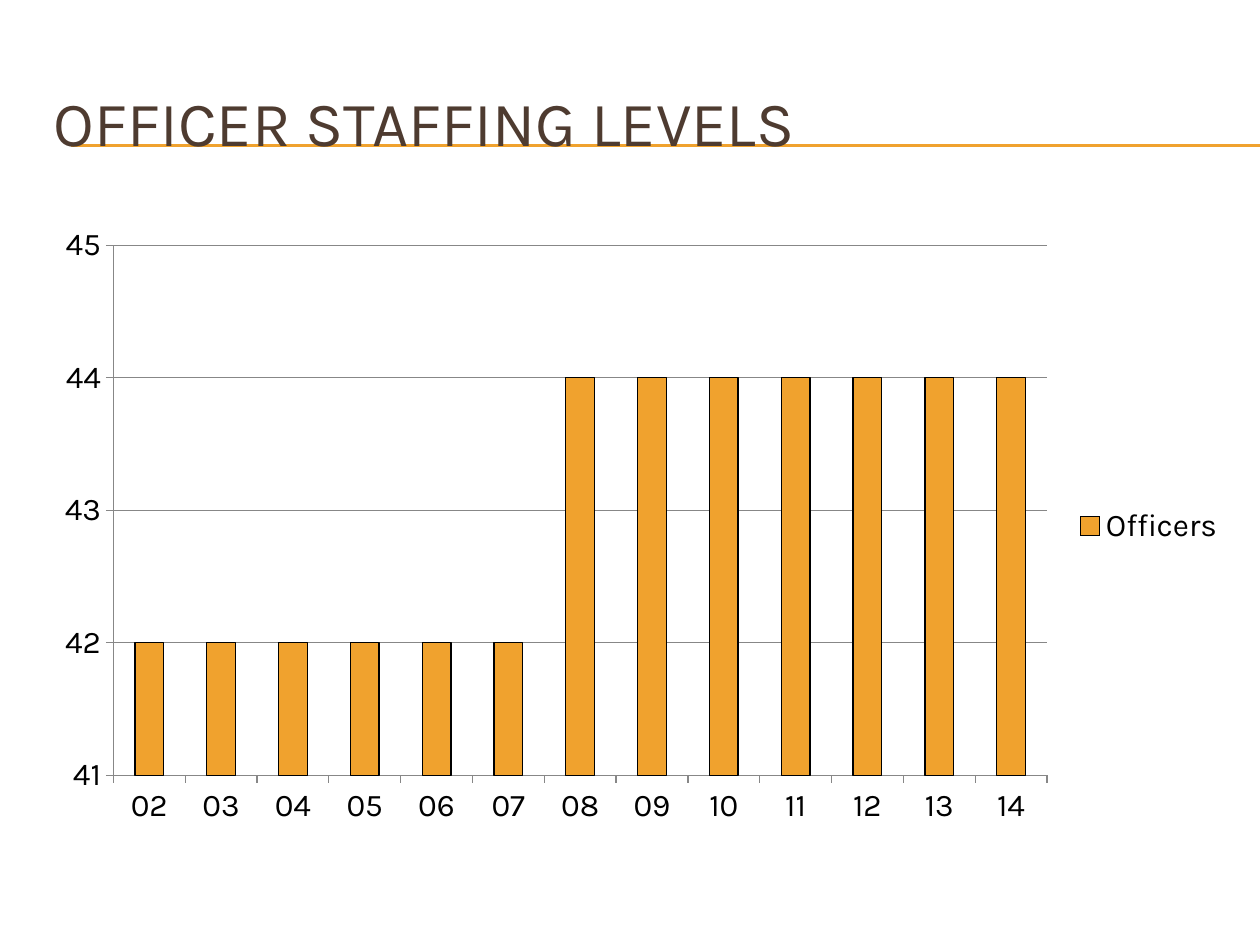
"""Build the officer staffing levels slide."""
from lxml.etree import SubElement as Sub
from pptx import Presentation
from pptx.chart.data import CategoryChartData as Data
from pptx.dml.color import RGBColor as RGB
from pptx.enum.chart import XL_CHART_TYPE as Kind, XL_LEGEND_POSITION as Side, XL_TICK_MARK as Tick
from pptx.enum.shapes import MSO_CONNECTOR as Link
from pptx.enum.text import MSO_ANCHOR as Anchor
from pptx.oxml.ns import qn
from pptx.util import Inches, Pt

TITLE = "OFFICER STAFFING LEVELS"
FONT = "Karla"
GOLD, BROWN, BLACK, GRAY = "F0A22E", "4E3B30", "000000", "878787"
YEARS = [f"{year:02}" for year in range(2, 15)]
STAFF = [42] * 6 + [44] * 7
RULES = [1.15, 1.16]
LEFT, WIDTH = 0.33, 9.5
PLOT = {"x": 0.06, "y": 0.05, "w": 0.78, "h": 0.85}


def paint(color, hue):
    color.rgb = RGB.from_string(hue)


def stroke(line, hue):
    line.fill.solid()
    paint(line.color, hue)
    line.width = Pt(0.75)


def style(font, size, hue):
    font.name, font.size, font.bold = FONT, Pt(size), False
    paint(font.color, hue)


def add_rule(slide, top):
    rule = slide.shapes.add_connector(Link.STRAIGHT, Inches(0.56), Inches(top), Inches(10), Inches(top))
    stroke(rule.line, GOLD)
    Sub(rule.element.spPr, qn("a:effectLst"))


def add_title(slide):
    box = slide.shapes.add_textbox(Inches(LEFT), Inches(0.5), Inches(WIDTH), Inches(0.92))
    frame = box.text_frame
    frame.word_wrap = True
    frame.vertical_anchor = Anchor.MIDDLE
    run = frame.paragraphs[0].add_run()
    run.text = TITLE
    style(run.font, 36, BROWN)


def place_plot(chart):
    area = chart.element.find(".//" + qn("c:plotArea"))
    layout = area.find(qn("c:layout"))
    if layout is None:
        layout = Sub(area, qn("c:layout"))
        area.insert(0, layout)
    manual = Sub(layout, qn("c:manualLayout"))
    modes = {"layoutTarget": "inner", "xMode": "edge", "yMode": "edge"}
    for tag, val in {**modes, **PLOT}.items():
        Sub(manual, qn(f"c:{tag}")).set("val", str(val))


def add_bars(slide):
    data = Data()
    data.categories = YEARS
    data.add_series("Officers", STAFF)
    chart = slide.shapes.add_chart(
        Kind.COLUMN_CLUSTERED, Inches(LEFT), Inches(1.7), Inches(WIDTH), Inches(4.95), data).chart
    style(chart.font, 18, BLACK)
    chart.has_title = False
    chart.has_legend = True
    chart.legend.position = Side.RIGHT
    chart.legend.include_in_layout = False
    place_plot(chart)
    for axis in (chart.category_axis, chart.value_axis):
        axis.major_tick_mark = Tick.OUTSIDE
        axis.minor_tick_mark = Tick.NONE
        stroke(axis.format.line, GRAY)
    scale = chart.value_axis
    scale.minimum_scale, scale.maximum_scale, scale.major_unit = 41, 45, 1
    scale.has_major_gridlines = True
    stroke(scale.major_gridlines.format.line, GRAY)
    plot = chart.plots[0]
    plot.gap_width = 150
    plot.vary_by_categories = False
    bars = plot.series[0]
    bars.format.fill.solid()
    paint(bars.format.fill.fore_color, GOLD)
    stroke(bars.format.line, BLACK)


def main():
    deck = Presentation()
    deck.slide_width, deck.slide_height = Inches(10), Inches(7.5)
    slide = deck.slides.add_slide(deck.slide_layouts[6])
    for top in RULES:
        add_rule(slide, top)
    add_title(slide)
    add_bars(slide)
    deck.save("out.pptx")


if __name__ == "__main__":
    main()
